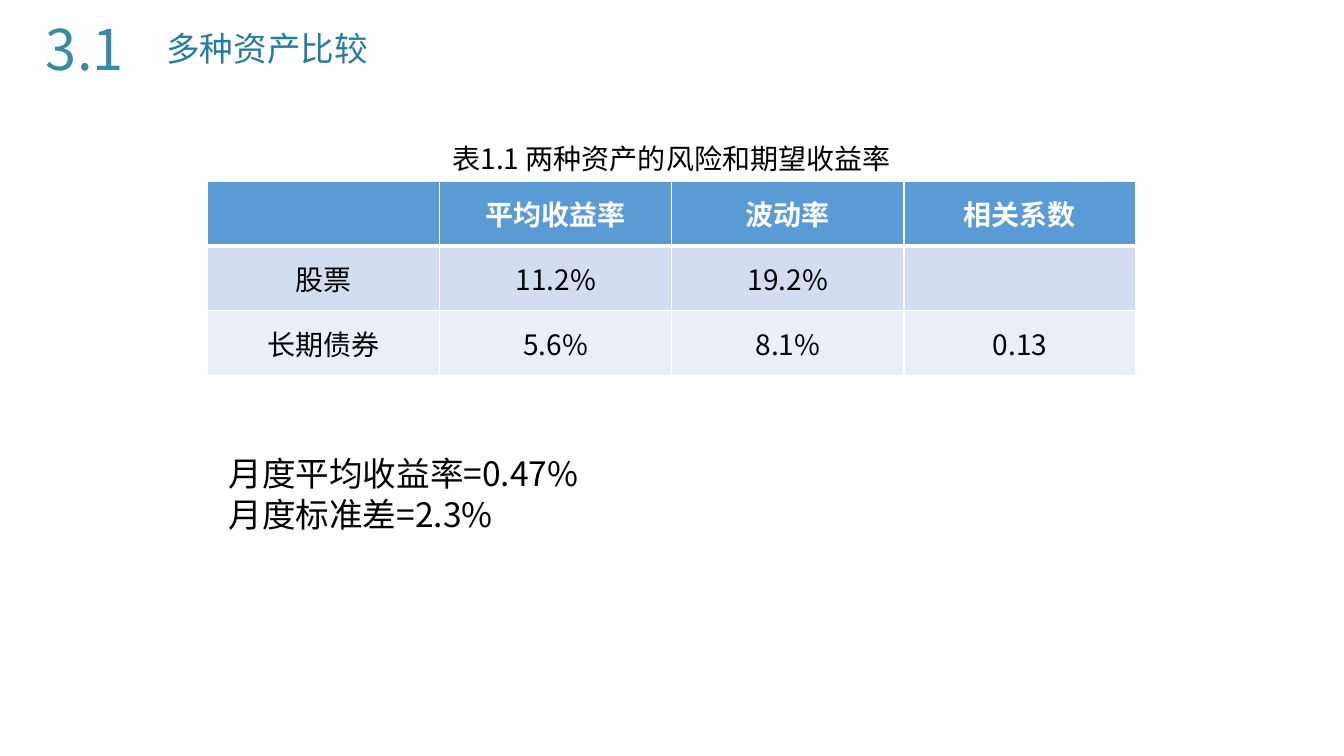
from dataclasses import dataclass

from lxml import etree
from pptx import Presentation
from pptx.dml.color import RGBColor
from pptx.enum.text import MSO_ANCHOR, MSO_AUTO_SIZE, PP_ALIGN
from pptx.oxml.ns import qn
from pptx.util import Cm, Pt

LEFT, CENTER, JUSTIFY = PP_ALIGN.LEFT, PP_ALIGN.CENTER, PP_ALIGN.JUSTIFY
MIDDLE = MSO_ANCHOR.MIDDLE
GROW = MSO_AUTO_SIZE.SHAPE_TO_FIT_TEXT


@dataclass(frozen=True)
class Theme:
    font: str = "Noto Sans CJK SC"
    number: str = "388BA5"
    title: str = "267CA0"
    text: str = "000000"
    white: str = "FFFFFF"
    header: str = "5B9BD5"
    bands: tuple = ("D2DEEF", "EAEFF7")
    number_size: int = 40
    large_size: int = 24
    table_size: int = 20
    thin: int = 1
    thick: int = 3


THEME = Theme()

ASSET_ROWS = [
    ["", "平均收益率", "波动率", "相关系数"],
    ["股票", "11.2%", "19.2%", ""],
    ["长期债券", "5.6%", "8.1%", "0.13"],
]


def style_paragraph(paragraph, size, color, align=LEFT, bold=False):
    paragraph.alignment = align
    font = paragraph.font
    font.name = THEME.font
    font.size = Pt(size)
    font.bold = bold
    font.color.rgb = RGBColor.from_string(color)
    # Chinese characters take their typeface from the East Asian slot.
    defaults = paragraph._p.pPr.find(qn("a:defRPr"))
    etree.SubElement(defaults, qn("a:ea"), typeface=THEME.font)


def add_text(slide, box, lines, size, color, align=LEFT, wrap=True):
    shape = slide.shapes.add_textbox(*(Cm(length) for length in box))
    frame = shape.text_frame
    frame.word_wrap = wrap
    frame.auto_size = GROW
    frame.text = "\n".join(lines)
    for paragraph in frame.paragraphs:
        style_paragraph(paragraph, size, color, align)


def add_borders(cell, top, bottom):
    """Draw white cell edges; top and bottom are widths in points."""
    properties = cell._tc.get_or_add_tcPr()
    widths = {"lnL": THEME.thin, "lnR": THEME.thin, "lnT": top, "lnB": bottom}
    for edge, width in widths.items():
        line = etree.SubElement(properties, qn(f"a:{edge}"), w=str(Pt(width)))
        fill = etree.SubElement(line, qn("a:solidFill"))
        etree.SubElement(fill, qn("a:srgbClr"), val=THEME.white)


def fill_cell(cell, text, row_index):
    is_header = row_index == 0
    add_borders(
        cell,
        top=THEME.thick if row_index == 1 else THEME.thin,
        bottom=THEME.thick if is_header else THEME.thin,
    )
    background = THEME.header if is_header else THEME.bands[row_index - 1]
    cell.fill.solid()
    cell.fill.fore_color.rgb = RGBColor.from_string(background)
    cell.vertical_anchor = MIDDLE
    cell.text = text
    style_paragraph(
        cell.text_frame.paragraphs[0],
        THEME.table_size,
        THEME.white if is_header else THEME.text,
        CENTER,
        bold=is_header,
    )


def add_asset_table(slide, left, top, column_width, row_height):
    row_count, column_count = len(ASSET_ROWS), len(ASSET_ROWS[0])
    table = slide.shapes.add_table(
        row_count, column_count, Cm(left), Cm(top),
        Cm(column_width * column_count), Cm(row_height * row_count),
    ).table
    for row_index, values in enumerate(ASSET_ROWS):
        for column_index, text in enumerate(values):
            fill_cell(table.cell(row_index, column_index), text, row_index)


def main():
    presentation = Presentation()
    presentation.slide_width = Cm(33.87)
    presentation.slide_height = Cm(19.05)
    slide = presentation.slides.add_slide(presentation.slide_layouts[6])

    add_text(slide, (3.94, 0.58, 12.06, 1.28), ["多种资产比较"],
             THEME.large_size, THEME.title, JUSTIFY)
    add_text(slide, (0.91, 0.25, 2.54, 1.96), ["3.1"],
             THEME.number_size, THEME.number, wrap=False)
    add_asset_table(slide, left=5.23, top=4.57, column_width=5.85, row_height=1.63)
    add_text(slide, (5.51, 11.3, 22.86, 2.31),
             ["月度平均收益率=0.47%", "月度标准差=2.3%"],
             THEME.large_size, THEME.text)
    add_text(slide, (10.59, 3.43, 12.67, 1.12), ["表1.1 两种资产的风险和期望收益率"],
             THEME.table_size, THEME.text, CENTER)

    presentation.save("out.pptx")


if __name__ == "__main__":
    main()
